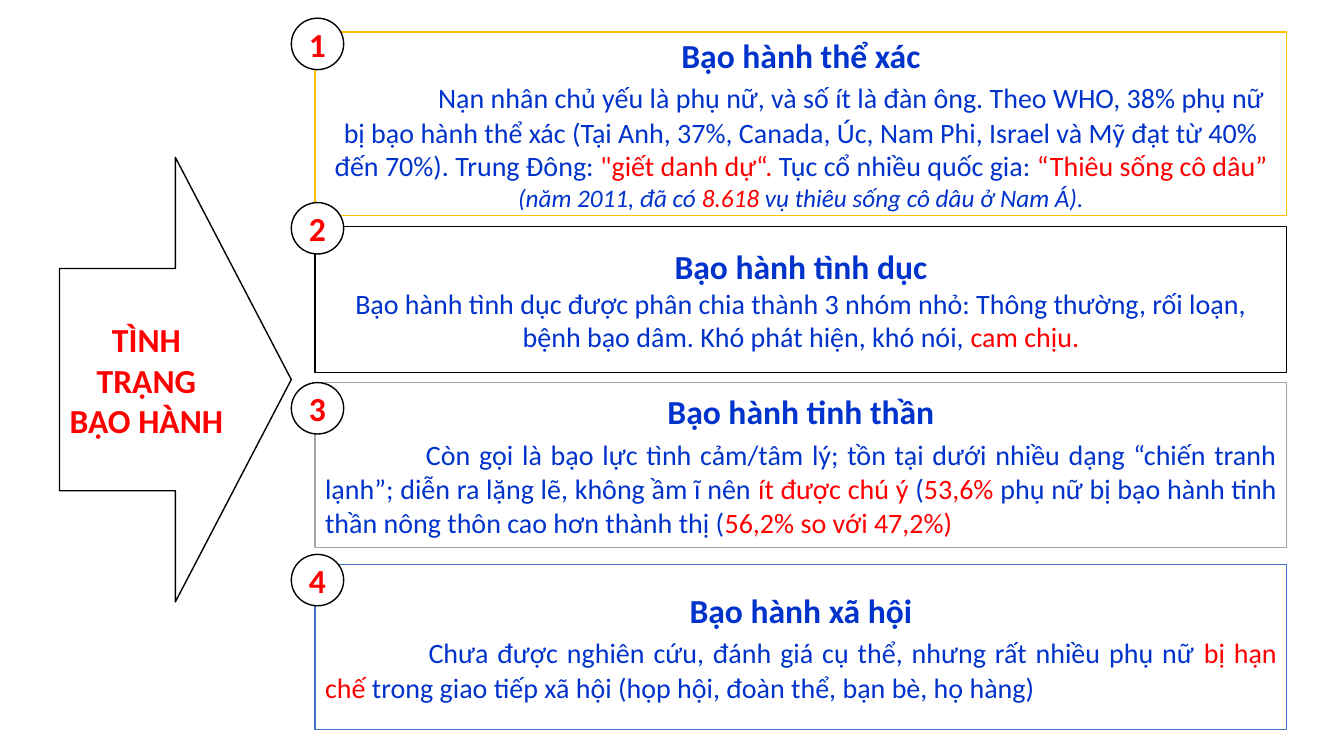
from pptx import Presentation
from pptx.dml.color import RGBColor
from pptx.enum.shapes import MSO_SHAPE
from pptx.enum.text import MSO_ANCHOR, PP_ALIGN
from pptx.util import Pt

COLORS = {
    "white": "FFFFFF", "black": "000000", "red": "FF0000", "blue": "0033CC",
    "gold": "FFC000", "gray": "A5A5A5", "steel": "4472C4",
}
FONT = "Calibri"

# Style: size, colour, bold, italic
STYLES = {
    "label": (24, "red", True, False),
    "title": (24, "blue", True, False),
    "lead": (24, "blue", False, False),
    "body": (20, "blue", False, False),
    "stress": (20, "red", False, False),
    "note": (18, "blue", False, True),
    "note stress": (18, "red", False, True),
}

TOPIC = ["TÌNH TRẠNG", "BẠO HÀNH"]

# Each form of violence: place of card and badge, outline, then its words
FORMS = [
    {"top": 22.9, "height": 131, "badge_top": 13, "outline": "gold",
     "title": "Bạo hành thể xác", "align": PP_ALIGN.CENTER,
     "details": [
         ("\t", "lead"),
         ("Nạn nhân chủ yếu là phụ nữ, và số ít là đàn ông. Theo WHO, 38% phụ nữ bị bạo hành "
          "thể xác (Tại Anh, 37%, Canada, Úc, Nam Phi, Israel và Mỹ đạt từ 40% đến 70%). "
          "Trung Đông: ", "body"),
         ("\"giết danh dự“. ", "stress"),
         ("Tục cổ nhiều quốc gia: ", "body"),
         ("“Thiêu sống cô dâu” ", "stress"),
         ("(năm 2011, đã có ", "note"),
         ("8.618 ", "note stress"),
         ("vụ thiêu sống cô dâu ở Nam Á).", "note")]},
    {"top": 161.7, "height": 104.4, "badge_top": 144.7, "outline": "black",
     "title": "Bạo hành tình dục", "align": PP_ALIGN.CENTER,
     "details": [
         ("Bạo hành tình dục được phân chia thành 3 nhóm nhỏ: Thông thường, rối loạn, "
          "bệnh bạo dâm. Khó phát hiện, khó nói, ", "body"),
         ("cam chịu.", "stress")]},
    {"top": 273.3, "height": 118, "badge_top": 273.3, "outline": "gray",
     "title": "Bạo hành tinh thần", "align": PP_ALIGN.JUSTIFY,
     "details": [
         ("\t", "lead"),
         ("Còn gọi là bạo lực tình cảm/tâm lý; tồn tại dưới nhiều dạng “chiến tranh lạnh”; "
          "diễn ra lặng lẽ, không ầm ĩ nên ", "body"),
         ("ít được chú ý ", "stress"),
         ("(", "body"),
         ("53,6% ", "stress"),
         ("phụ nữ bị bạo hành tinh thần nông thôn cao hơn thành thị (", "body"),
         ("56,2% so với 47,2%)", "stress")]},
    {"top": 403.2, "height": 118, "badge_top": 396, "outline": "steel",
     "title": "Bạo hành xã hội", "align": PP_ALIGN.JUSTIFY,
     "details": [
         (" \t", "lead"),
         ("Chưa được nghiên cứu, đánh giá cụ thể, nhưng rất nhiều phụ nữ ", "body"),
         ("bị hạn chế ", "stress"),
         ("trong giao tiếp xã hội (họp hội, đoàn thể, bạn bè, họ hàng)", "body")]},
]

CARD_LEFT, CARD_WIDTH = 225.1, 694
BADGE_LEFT, BADGE_WIDTH, BADGE_HEIGHT = 208.1, 37.4, 36.7
ARROW_BOX = (42.5, 112.4, 165.6, 317.5)
TAB_WIDTH = 72


def rgb(color):
    return RGBColor.from_string(COLORS[color])


def add_outlined(slide, kind, box, outline, paragraphs):
    """Add a white shape; paragraphs holds (alignment, [(text, style), ...])."""
    shape = slide.shapes.add_shape(kind, *map(Pt, box))
    shape.shadow.inherit = False
    shape.fill.solid()
    shape.fill.fore_color.rgb = rgb("white")
    shape.line.color.rgb = rgb(outline)
    shape.line.width = Pt(1)
    frame = shape.text_frame
    frame.word_wrap = True
    frame.vertical_anchor = MSO_ANCHOR.MIDDLE
    for index, (align, spans) in enumerate(paragraphs):
        paragraph = frame.add_paragraph() if index else frame.paragraphs[0]
        paragraph.alignment = align
        paragraph._p.get_or_add_pPr().set("defTabSz", str(Pt(TAB_WIDTH)))
        for text, style in spans:
            run = paragraph.add_run()
            run.text = text
            size, color, run.font.bold, run.font.italic = STYLES[style]
            run.font.name = FONT
            run.font.size = Pt(size)
            run.font.color.rgb = rgb(color)


def main():
    deck = Presentation()
    deck.slide_width, deck.slide_height = Pt(960), Pt(540)
    slide = deck.slides.add_slide(deck.slide_layouts[6])

    add_outlined(slide, MSO_SHAPE.RIGHT_ARROW, ARROW_BOX, "black",
                 [(PP_ALIGN.CENTER, [(line, "label")]) for line in TOPIC])
    for form in FORMS:
        add_outlined(slide, MSO_SHAPE.RECTANGLE,
                     (CARD_LEFT, form["top"], CARD_WIDTH, form["height"]), form["outline"],
                     [(PP_ALIGN.CENTER, [(form["title"], "title")]),
                      (form["align"], form["details"])])
    for number, form in enumerate(FORMS, 1):
        add_outlined(slide, MSO_SHAPE.OVAL,
                     (BADGE_LEFT, form["badge_top"], BADGE_WIDTH, BADGE_HEIGHT), "black",
                     [(PP_ALIGN.CENTER, [(str(number), "label")])])
    deck.save("out.pptx")


if __name__ == "__main__":
    main()
